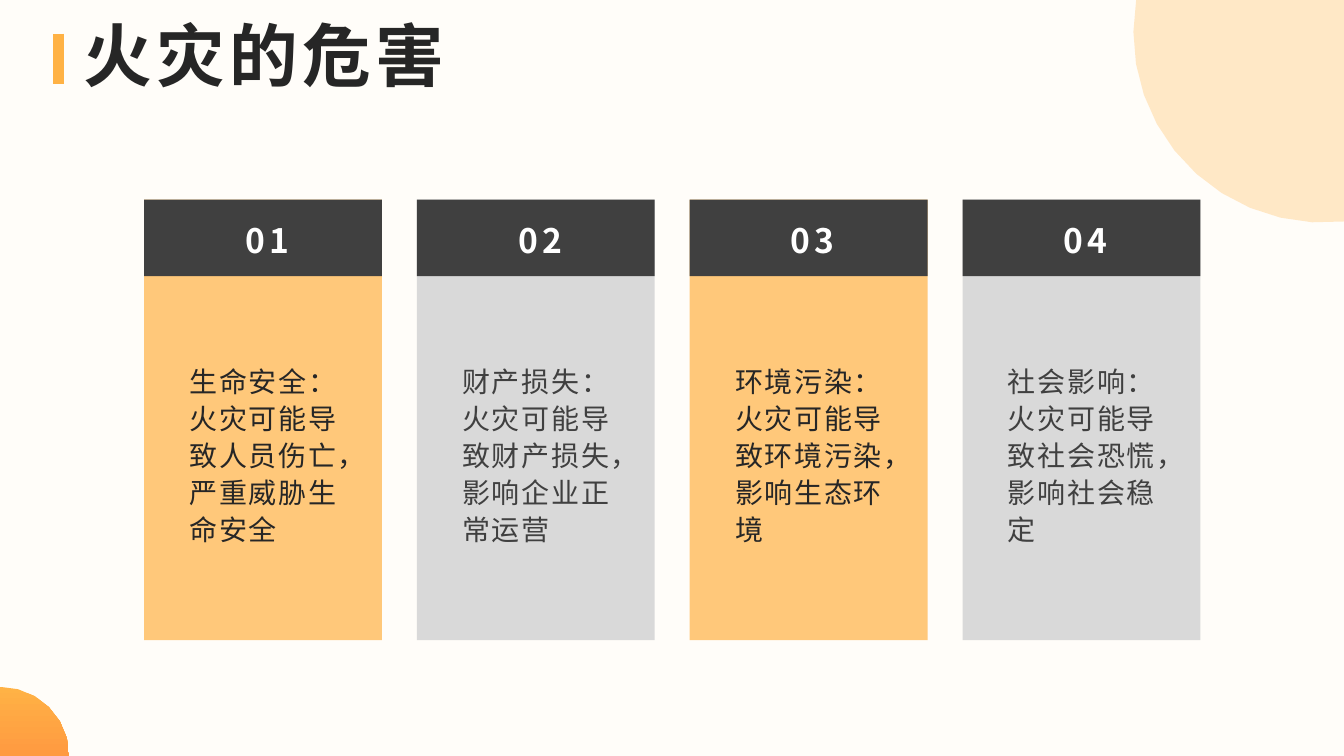
from math import cos, radians, sin

from lxml.etree import SubElement
from pptx import Presentation
from pptx.dml.color import RGBColor
from pptx.enum.shapes import MSO_CONNECTOR, MSO_SHAPE
from pptx.enum.text import MSO_ANCHOR, MSO_AUTO_SIZE, PP_ALIGN
from pptx.oxml.ns import qn
from pptx.util import Pt

FONT = "Noto Sans CJK SC"
CREAM = RGBColor(0xFF, 0xFD, 0xF9)
AMBER = RGBColor(0xFF, 0xB2, 0x45)
ORANGE = RGBColor(0xFF, 0x9A, 0x41)
INK = RGBColor(0x26, 0x26, 0x26)
CHARCOAL = RGBColor(0x40, 0x40, 0x40)
SILVER = RGBColor(0xD9, 0xD9, 0xD9)
WHITE = RGBColor(0xFF, 0xFF, 0xFF)

PAGE_WIDTH, PAGE_HEIGHT = 960, 540
CARD_LEFT, CARD_TOP, CARD_WIDTH, CARD_HEIGHT = 102.9, 142.6, 169.9, 314.6
CARD_PITCH, HEADER_HEIGHT = 194.9, 54.7
HAZARDS = [
    "生命安全：火灾可能导致人员伤亡，严重威胁生命安全",
    "财产损失：火灾可能导致财产损失，影响企业正常运营",
    "环境污染：火灾可能导致环境污染，影响生态环境",
    "社会影响：火灾可能导致社会恐慌，影响社会稳定",
]


def write(shape, text, size, color, spacing, bold=False, align=PP_ALIGN.LEFT,
          line_spacing=1.0, space_after=0, insets=(0, 0, 0, 0)):
    """Fill a shape with one formatted paragraph; insets run left, top, right, bottom."""
    frame = shape.text_frame
    frame.word_wrap = True
    frame.auto_size = MSO_AUTO_SIZE.NONE
    frame.vertical_anchor = MSO_ANCHOR.MIDDLE
    (frame.margin_left, frame.margin_top,
     frame.margin_right, frame.margin_bottom) = [Pt(inset) for inset in insets]
    para = frame.paragraphs[0]
    para.alignment = align
    para.line_spacing = line_spacing
    para.space_before, para.space_after = Pt(0), Pt(space_after)
    span = para.add_run()
    span.text = text
    span.font.name, span.font.size, span.font.bold = FONT, Pt(size), bold
    span.font.color.rgb = color
    properties = span.font._element
    properties.set("spc", str(round(spacing * 100)))
    SubElement(properties, qn("a:ea"), typeface=FONT)


def add_corner_disc(center, radius, start, end, steps, corner):
    """Draw an arc from start to end degrees, closed through a page corner."""
    angles = [radians(start + (end - start) * step / steps) for step in range(steps + 1)]
    points = [
        (Pt(center[0] + radius * cos(angle)), Pt(center[1] + radius * sin(angle)))
        for angle in angles
    ]
    builder = page.shapes.build_freeform(*points[0])
    builder.add_line_segments(points[1:] + [(Pt(corner[0]), Pt(corner[1]))], close=True)
    disc = builder.convert_to_shape()
    disc.shadow.inherit = False
    disc.line.fill.background()
    return disc


deck = Presentation()
deck.slide_width, deck.slide_height = Pt(PAGE_WIDTH), Pt(PAGE_HEIGHT)
page = deck.slides.add_slide(deck.slide_layouts[5])
page.background.fill.solid()
page.background.fill.fore_color.rgb = CREAM

# Corner decorations
top_disc = add_corner_disc((945.4, 23.2), 135.8, 83.8, 189.8, 11, (PAGE_WIDTH, 0))
top_disc.fill.solid()
top_disc.fill.fore_color.rgb = AMBER
translucent = [(top_disc, 28)]

bottom_disc = add_corner_disc((0, PAGE_HEIGHT), 49.4, 270, 360, 6, (0, PAGE_HEIGHT))
bottom_disc.fill.gradient()
bottom_disc.fill.gradient_angle = 270
for stop, color in zip(bottom_disc.fill.gradient_stops, (AMBER, ORANGE)):
    stop.color.rgb = color

# Title with its accent bar
title = page.shapes.title
title.left, title.top, title.width, title.height = Pt(59.7), Pt(12.4), Pt(864), Pt(60)
write(title, "火灾的危害", size=49, color=INK, spacing=3.3, bold=True, line_spacing=0.9)

accent = page.shapes.add_connector(MSO_CONNECTOR.STRAIGHT, Pt(42), Pt(24), Pt(42), Pt(60))
accent.line.color.rgb = AMBER
accent.line.width = Pt(8)
SubElement(accent._element.spPr, qn("a:effectLst"))

# Numbered hazard cards
for index, hazard in enumerate(HAZARDS):
    left = CARD_LEFT + index * CARD_PITCH
    is_amber = index % 2 == 0
    for height, color in ((CARD_HEIGHT, AMBER if is_amber else SILVER),
                          (HEADER_HEIGHT, CHARCOAL)):
        panel = page.shapes.add_shape(MSO_SHAPE.RECTANGLE, Pt(left), Pt(CARD_TOP),
                                      Pt(CARD_WIDTH), Pt(height))
        panel.shadow.inherit = False
        panel.line.fill.background()
        panel.fill.solid()
        panel.fill.fore_color.rgb = color
        if color == AMBER:
            translucent.append((panel, 70))

    box = page.shapes.add_textbox(Pt(left + 25.3), Pt(237.3), Pt(121.7), Pt(173.5))
    write(box, hazard, size=20, color=INK if is_amber else CHARCOAL, spacing=1.2,
          line_spacing=1.1, space_after=8, insets=(7.2, 3.6, 7.2, 3.6))

    number = page.shapes.add_textbox(Pt(left + 67), Pt(153.3), Pt(41.8), Pt(36.7))
    write(number, f"{index + 1:02}", size=24, color=WHITE, spacing=3, bold=True,
          align=PP_ALIGN.CENTER)

for shape, opacity in translucent:
    fill_color = shape._element.spPr.find(qn("a:solidFill")).find(qn("a:srgbClr"))
    SubElement(fill_color, qn("a:alpha"), val=str(opacity * 1000))

deck.save("out.pptx")
